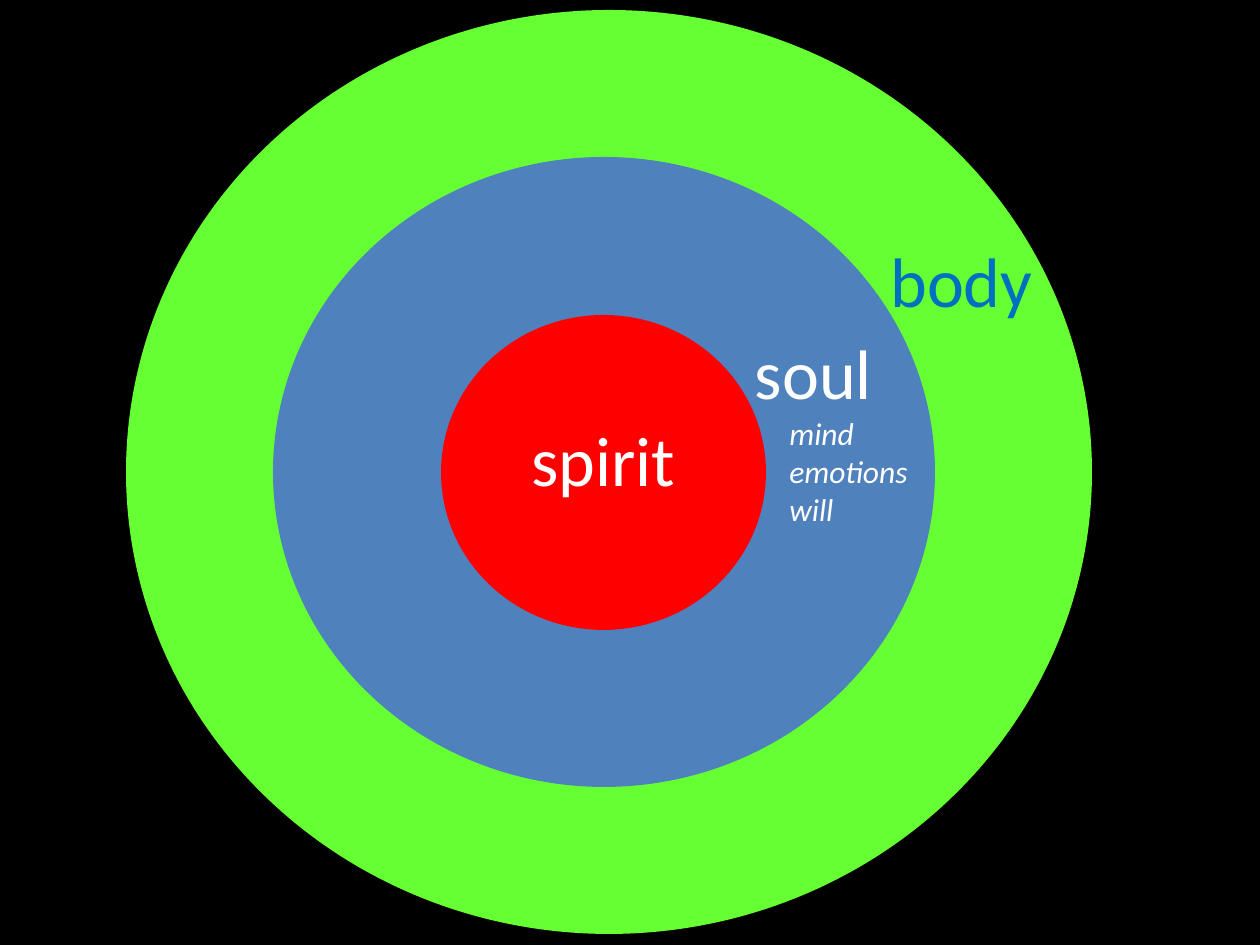
from pptx import Presentation, util as u
from pptx.dml.color import RGBColor
from pptx.enum import shapes, text

PX = u.Inches(1) // 126
COLORS = {"back": "000000", "body": "66FF33", "soul": "4F81BD", "spirit": "FF0000",
          "light": "FFFFFF", "blue": "0070C0"}

RINGS = [
    ("body", 126, 10, 966, 924),
    ("soul", 273, 157, 662, 630),
    ("spirit", 441, 315, 325, 315),
]
LABEL_W, LABEL_H = 179, 97
LABELS = [
    ("spirit", 514, 410, "light"),
    ("soul", 724, 323, "light"),
    ("body", 872, 231, "blue"),
]
SOUL_PARTS = ["mind", "emotions", "will"]


def rgb(name):
    return RGBColor.from_string(COLORS[name])


def box(*px):
    return [v * PX for v in px]


def add_text(s, lines, place, size, color, align, italic=None):
    tf = s.shapes.add_textbox(*box(*place)).text_frame
    tf.word_wrap = True
    tf.auto_size = text.MSO_AUTO_SIZE.SHAPE_TO_FIT_TEXT
    tf.text = "\n".join(lines)
    for p in tf.paragraphs:
        p.alignment = align
        p.font.name = "Calibri"
        p.font.size = u.Pt(size)
        p.font.italic = italic
        p.font.color.rgb = rgb(color)


prs = Presentation()
prs.slide_width, prs.slide_height = box(1260, 945)
s = prs.slides.add_slide(prs.slide_layouts[6])
s.background.fill.solid()
s.background.fill.fore_color.rgb = rgb("back")

for name, *place in RINGS:
    sp = s.shapes.add_shape(shapes.MSO_SHAPE.OVAL, *box(*place))
    sp.shadow.inherit = False
    sp.fill.solid()
    sp.fill.fore_color.rgb = rgb(name)
    sp.line.fill.background()

for word, x, y, color in LABELS:
    add_text(s, [word], (x, y, LABEL_W, LABEL_H), 40, color, text.PP_ALIGN.CENTER)
add_text(s, SOUL_PARTS, (777, 408, LABEL_W, 127), 18, "light", text.PP_ALIGN.LEFT, True)

prs.save("out.pptx")
